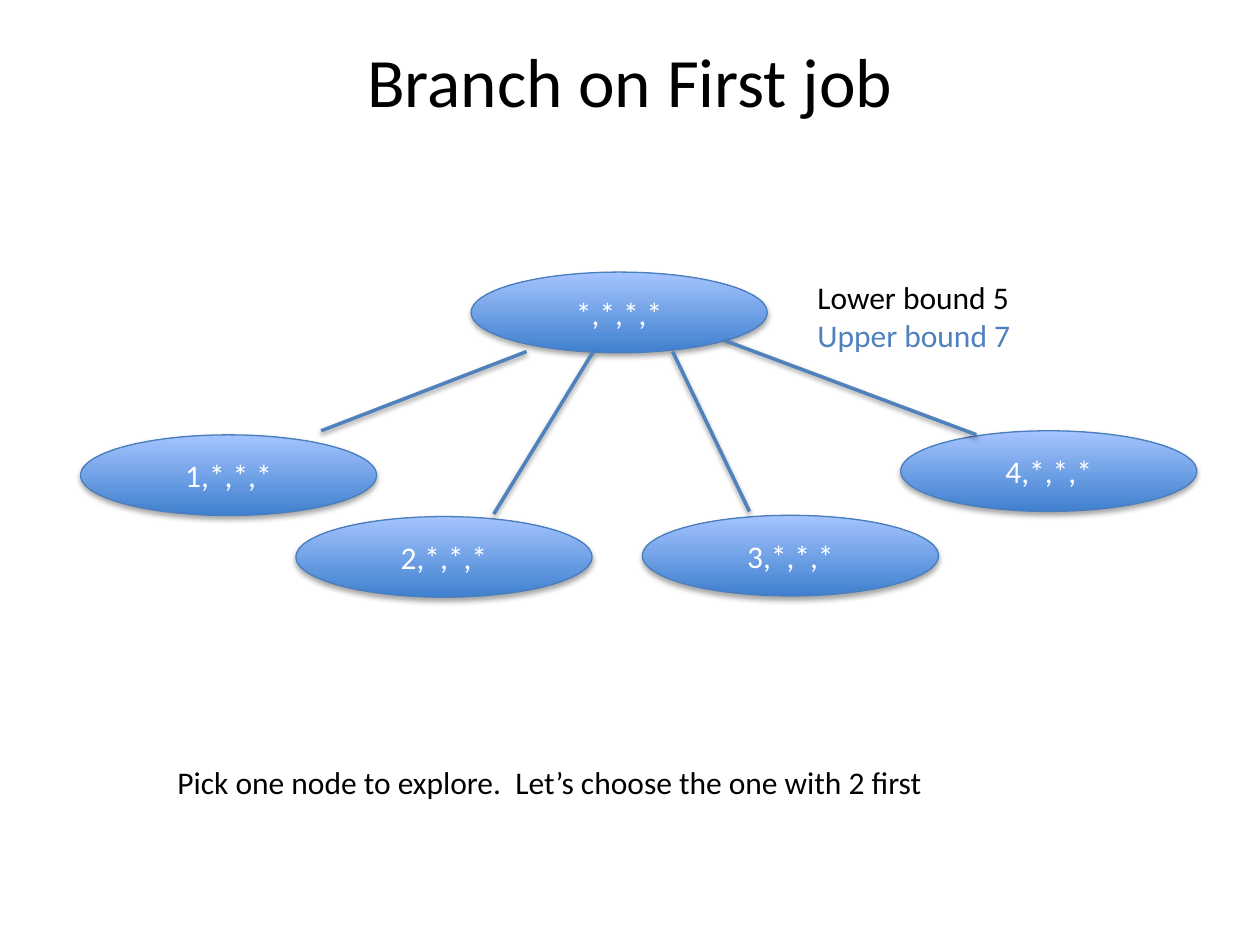
from lxml.etree import SubElement
from pptx import Presentation
from pptx.dml.color import RGBColor
from pptx.enum.shapes import MSO_CONNECTOR, MSO_SHAPE
from pptx.enum.text import MSO_ANCHOR, MSO_AUTO_SIZE, PP_ALIGN
from pptx.oxml.ns import qn
from pptx.util import Pt

COLORS = {
    "black": "000000",
    "white": "FFFFFF",
    "accent": "4F81BD",
    "outline": "4B7EBC",
    "node_bottom": "3F80CE",
    "node_top": "A4C4FF",
}
FONT = "Calibri"
NODE_W, NODE_H = 169.2, 46.08


def rgb(name):
    return RGBColor.from_string(COLORS[name])


def add_run(p, text, size=18, color="black", align=PP_ALIGN.LEFT):
    p.alignment = align
    r = p.add_run()
    r.text = text
    r.font.name = FONT
    r.font.size = Pt(size)
    r.font.color.rgb = rgb(color)


def add_shadow(shape, distance, opacity):
    effects = SubElement(shape._element.spPr, qn("a:effectLst"))
    shadow = SubElement(effects, qn("a:outerShdw"), blurRad=str(Pt(3.1)),
                        dist=str(Pt(distance)), dir="5400000", rotWithShape="0")
    color = SubElement(shadow, qn("a:srgbClr"), val=COLORS["black"])
    SubElement(color, qn("a:alpha"), val=str(opacity * 1000))


def add_title(s, box, text):
    tf = s.shapes.add_textbox(*map(Pt, box)).text_frame
    tf.word_wrap = True
    tf.vertical_anchor = MSO_ANCHOR.TOP
    tf.margin_top = 0
    add_run(tf.paragraphs[0], text, size=39.6, align=PP_ALIGN.CENTER)


def add_note(s, box, lines):
    tf = s.shapes.add_textbox(*map(Pt, box)).text_frame
    tf.word_wrap = False
    tf.auto_size = MSO_AUTO_SIZE.SHAPE_TO_FIT_TEXT
    for i, (text, color) in enumerate(lines):
        p = tf.add_paragraph() if i else tf.paragraphs[0]
        add_run(p, text, color=color)


def add_node(s, left, top, text):
    sp = s.shapes.add_shape(MSO_SHAPE.OVAL, Pt(left), Pt(top), Pt(NODE_W), Pt(NODE_H))
    sp.fill.gradient()
    sp.fill.gradient_angle = 90
    for stop, color in zip(sp.fill.gradient_stops, ("node_bottom", "node_top")):
        stop.color.rgb = rgb(color)
    sp.line.color.rgb = rgb("outline")
    sp.line.width = Pt(0.75)
    add_shadow(sp, 1.8, 35)
    tf = sp.text_frame
    tf.word_wrap = True
    tf.vertical_anchor = MSO_ANCHOR.MIDDLE
    add_run(tf.paragraphs[0], text, color="white", align=PP_ALIGN.CENTER)


def add_branch(s, start, end):
    line = s.shapes.add_connector(MSO_CONNECTOR.STRAIGHT, *map(Pt, start + end))
    line.line.color.rgb = rgb("accent")
    line.line.width = Pt(2)
    add_shadow(line, 1.6, 38)


def add_tree(s, box):
    left, top = box[:2]
    nodes = [
        ("*,*,*,*", 223.2, 0),
        ("3,*,*,*", 321.1, 139),
        ("4,*,*,*", 468.7, 90.7),
        ("2,*,*,*", 123.1, 139.7),
        ("1,*,*,*", 0, 93),
    ]
    branches = [
        ((254.9, 45.4), (137.5, 90.7)),
        ((293, 45.4), (236.2, 138.2)),
        ((338.4, 45.4), (382.3, 136.8)),
        ((367.9, 39), (511.9, 92.9)),
    ]
    for text, x, y in nodes:
        add_node(s, left + x, top + y, text)
    for ends in branches:
        add_branch(s, *((left + x, top + y) for x, y in ends))


def main():
    prs = Presentation()
    prs.slide_width, prs.slide_height = Pt(720), Pt(540)
    s = prs.slides.add_slide(prs.slide_layouts[6])
    add_title(s, (36, 21.6, 648, 90), "Branch on First job")
    add_tree(s, (46, 155.5, 637.9, 185.8))
    add_note(s, (460, 155.5, 125.3, 51),
             [("Lower bound 5", "black"), ("Upper bound 7", "accent")])
    add_note(s, (94.3, 432.7, 446.4, 29),
             [("Pick one node to explore.  Let’s choose the one with 2 first", "black")])
    prs.save("out.pptx")


if __name__ == "__main__":
    main()
